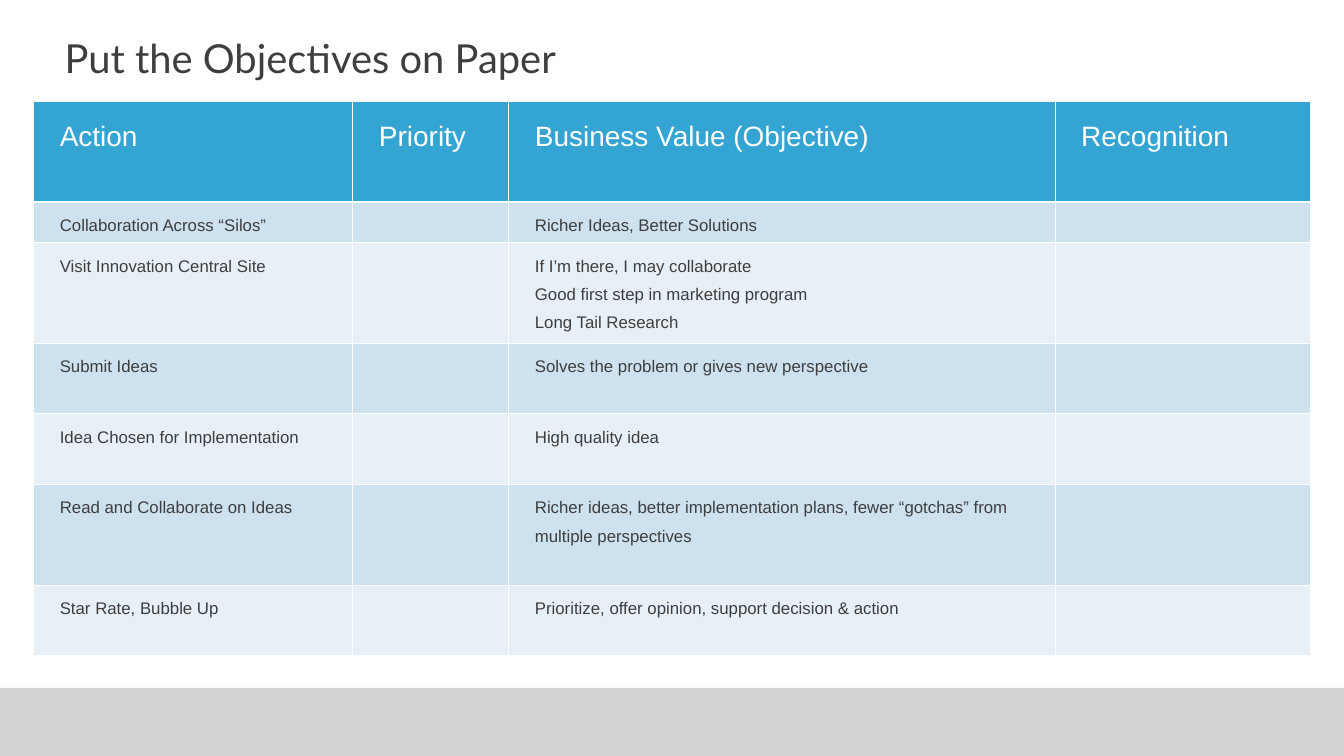
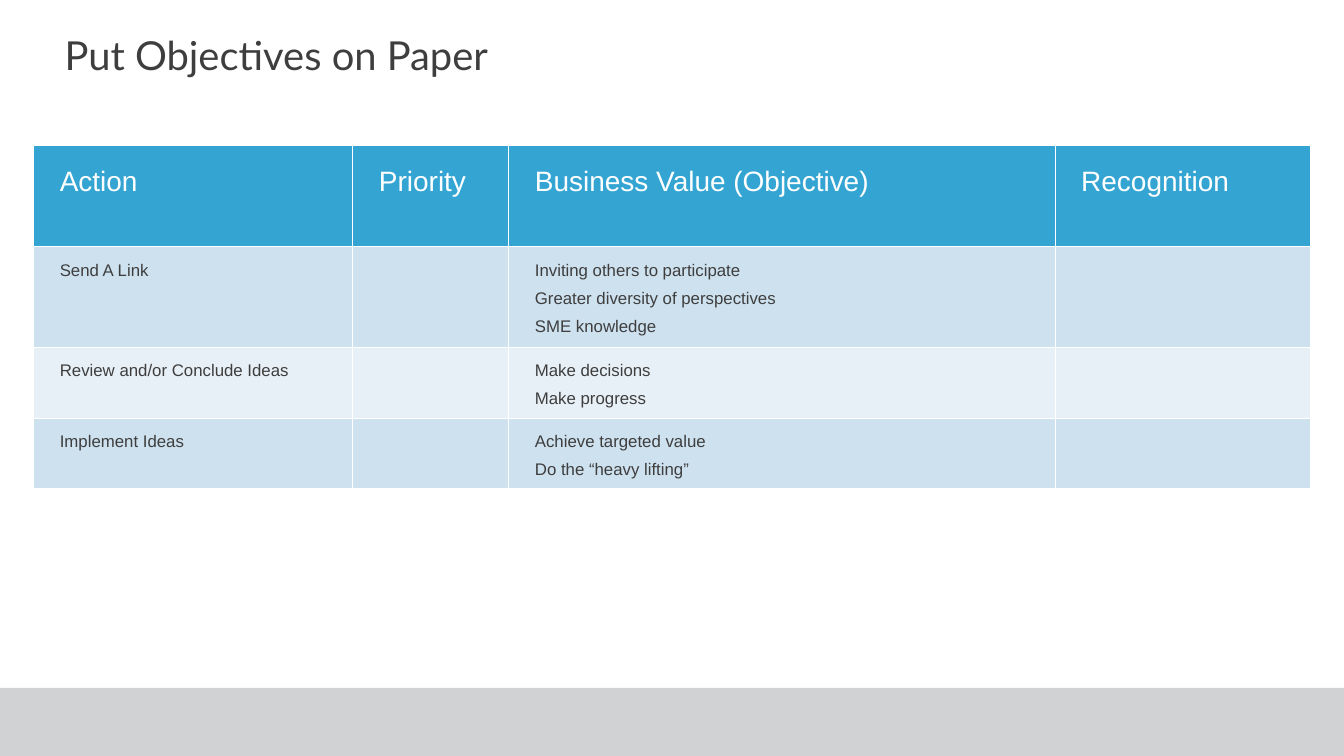
from dataclasses import dataclass

from lxml import etree
from pptx import Presentation
from pptx import util as u
from pptx.dml.color import RGBColor
from pptx.enum import shapes, text
from pptx.oxml import ns

# Grid: 40 columns across, 150 rows down
WIDTH, HEIGHT = u.Inches(26.67), u.Inches(15)
COLUMNS, ROWS = 40, 150

# Shared colours
INK = RGBColor(0x3E, 0x3E, 0x3E)
WHITE = RGBColor(0xFF, 0xFF, 0xFF)
HEADER_BLUE = RGBColor(0x34, 0xA5, 0xD3)
BAND_DARK = RGBColor(0xCE, 0xE1, 0xEF)
BAND_LIGHT = RGBColor(0xE8, 0xF0, 0xF7)
FOOTER_GREY = RGBColor(0xD1, 0xD2, 0xD4)

# Shared formats
TITLE_FONT = {"name": "Lato", "size": u.Pt(57), "bold": False}
HEADER_FONT = {"name": "Arial", "size": u.Pt(40), "bold": False}
BODY_FONT = {"name": "Arial", "size": u.Pt(24), "bold": False}
TITLE_FRAME = {
    "margin_left": 0, "margin_right": 0, "margin_top": 0, "margin_bottom": 0,
    "word_wrap": True, "auto_size": text.MSO_AUTO_SIZE.NONE,
    "vertical_anchor": text.MSO_ANCHOR.MIDDLE,
}
CELL_MARGINS = {
    "margin_left": u.Inches(0.27), "margin_right": u.Inches(0.27),
    "margin_top": u.Inches(0.1), "margin_bottom": u.Inches(0.1),
}
CELL_INDENT = u.Inches(0.25)

HEADINGS = ("Action", "Priority", "Business Value (Objective)", "Recognition")
TABLE_COLUMNS = (9.5, 4.64, 16.26, 7.6)
HEADER_ROWS = 20


@dataclass(frozen=True)
class Objective:
    action: str
    values: tuple[str, ...]
    rows: float


@dataclass(frozen=True)
class ObjectivePage:
    title: str
    title_top: float
    table_top: float
    objectives: tuple[Objective, ...]


PAGES = (
    ObjectivePage("Put the Objectives on Paper", 7.7, 20, (
        Objective("Collaboration Across “Silos”",
                  ("Richer Ideas, Better Solutions",), 8.1),
        Objective("Visit Innovation Central Site",
                  ("If I’m there, I may collaborate",
                   "Good first step in marketing program",
                   "Long Tail Research"), 20),
        Objective("Submit Ideas",
                  ("Solves the problem or gives new perspective",), 14),
        Objective("Idea Chosen for Implementation", ("High quality idea",), 14),
        Objective("Read and Collaborate on Ideas",
                  ("Richer ideas, better implementation plans, "
                   "fewer “gotchas” from multiple perspectives",), 20),
        Objective("Star Rate, Bubble Up",
                  ("Prioritize, offer opinion, support decision & action",), 14),
    )),
    ObjectivePage("Put Objectives on Paper", 7.2, 28.9, (
        Objective("Send A Link",
                  ("Inviting others to participate",
                   "Greater diversity of perspectives",
                   "SME knowledge"), 20),
        Objective("Review and/or Conclude Ideas",
                  ("Make decisions", "Make progress"), 14),
        Objective("Implement Ideas",
                  ("Achieve targeted value", "Do the “heavy lifting”"), 14),
    )),
)


def across(columns: float) -> int:
    return round(WIDTH * columns / COLUMNS)


def down(rows: float) -> int:
    return round(HEIGHT * rows / ROWS)


def apply(target, values: dict) -> None:
    for name, value in values.items():
        setattr(target, name, value)


def add_footer_band(page) -> None:
    band = page.shapes.add_shape(shapes.MSO_SHAPE.RECTANGLE,
                                 0, down(136.5), WIDTH, down(13.5))
    band.shadow.inherit = False
    band.fill.solid()
    band.fill.fore_color.rgb = FOOTER_GREY
    band.line.fill.background()


def set_title(page, wording: str, top: float) -> None:
    title = page.shapes.title
    apply(title, {"left": across(1.92), "top": down(top),
                  "width": across(36), "height": down(9)})
    apply(title.text_frame, TITLE_FRAME)
    title.text_frame.text = wording
    para = title.text_frame.paragraphs[0]
    apply(para, {"alignment": text.PP_ALIGN.LEFT, "line_spacing": u.Pt(57.1)})
    apply(para.font, TITLE_FONT)
    para.font.color.rgb = INK


def set_borders(cell, bottom: float) -> None:
    properties = cell._tc.get_or_add_tcPr()
    for side, points in (("L", 1), ("R", 1), ("T", 1), ("B", bottom)):
        line = etree.SubElement(properties, ns.qn(f"a:ln{side}"),
                                w=str(u.Pt(points)))
        fill = etree.SubElement(line, ns.qn("a:solidFill"))
        etree.SubElement(fill, ns.qn("a:srgbClr"), val=str(WHITE))


def fill_cell(cell, lines: tuple[str, ...], background: RGBColor,
              font: dict, colour: RGBColor, bottom: float = 1) -> None:
    set_borders(cell, bottom)
    cell.fill.solid()
    cell.fill.fore_color.rgb = background
    apply(cell, CELL_MARGINS)
    cell.text_frame.text = "\n".join(lines)
    for para in cell.text_frame.paragraphs:
        para._p.get_or_add_pPr().set("marL", str(CELL_INDENT))
        para.line_spacing = 1.5
        apply(para.font, font)
        para.font.color.rgb = colour


def add_objectives(page, top: float, objectives: tuple[Objective, ...]) -> None:
    heights = (HEADER_ROWS, *(item.rows for item in objectives))
    table = page.shapes.add_table(
        len(heights), len(HEADINGS), across(1), down(top),
        across(sum(TABLE_COLUMNS)), down(sum(heights))).table
    for column, width in zip(table.columns, TABLE_COLUMNS):
        column.width = across(width)
    for row, height in zip(table.rows, heights):
        row.height = down(height)

    # Header row
    for cell, heading in zip(table.rows[0].cells, HEADINGS):
        fill_cell(cell, (heading,), HEADER_BLUE, HEADER_FONT, WHITE, bottom=3)

    # Banded body rows; priority and recognition are left to fill in
    for index, item in enumerate(objectives):
        background = BAND_LIGHT if index % 2 else BAND_DARK
        contents = ((item.action,), (), item.values, ())
        for cell, lines in zip(table.rows[index + 1].cells, contents):
            fill_cell(cell, lines, background, BODY_FONT, INK)


def main() -> None:
    deck = Presentation()
    deck.slide_width, deck.slide_height = WIDTH, HEIGHT
    title_only = deck.slide_layouts[5]
    for content in PAGES:
        page = deck.slides.add_slide(title_only)
        add_footer_band(page)
        set_title(page, content.title, content.title_top)
        add_objectives(page, content.table_top, content.objectives)
    deck.save("out.pptx")


if __name__ == "__main__":
    main()
